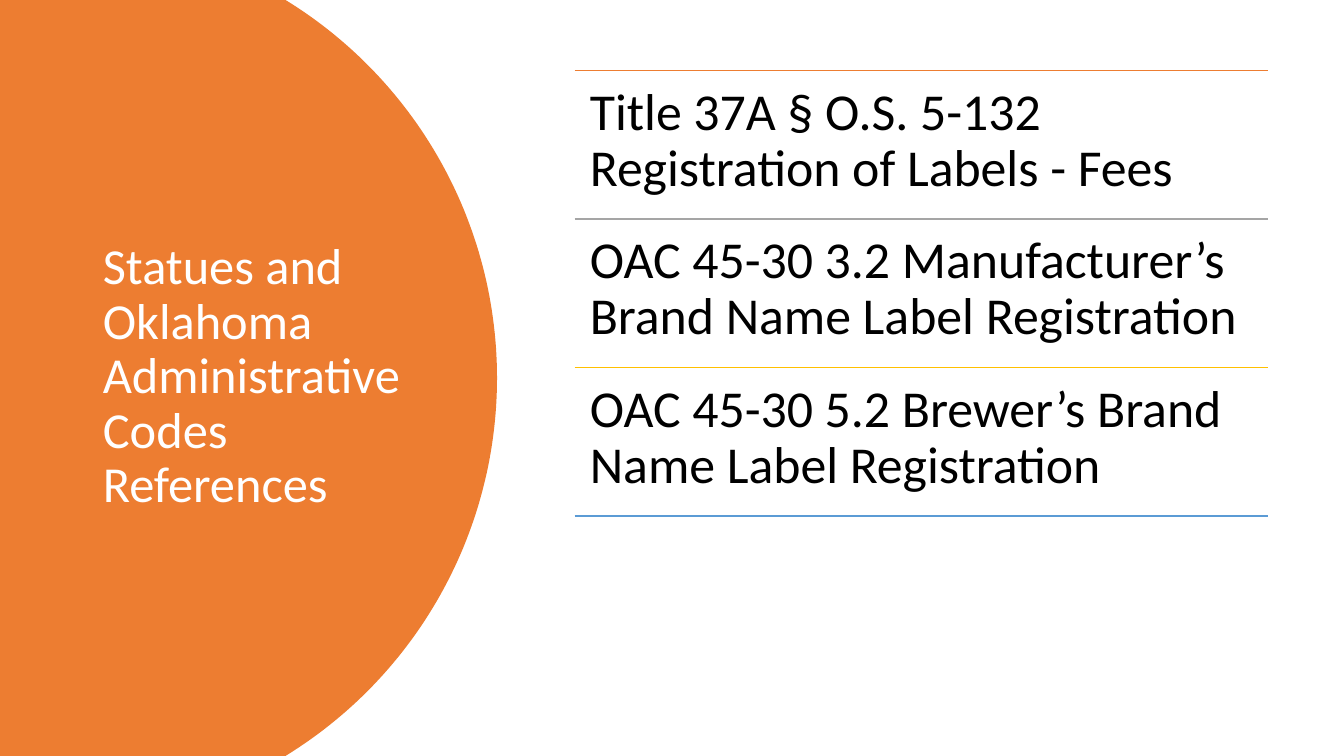
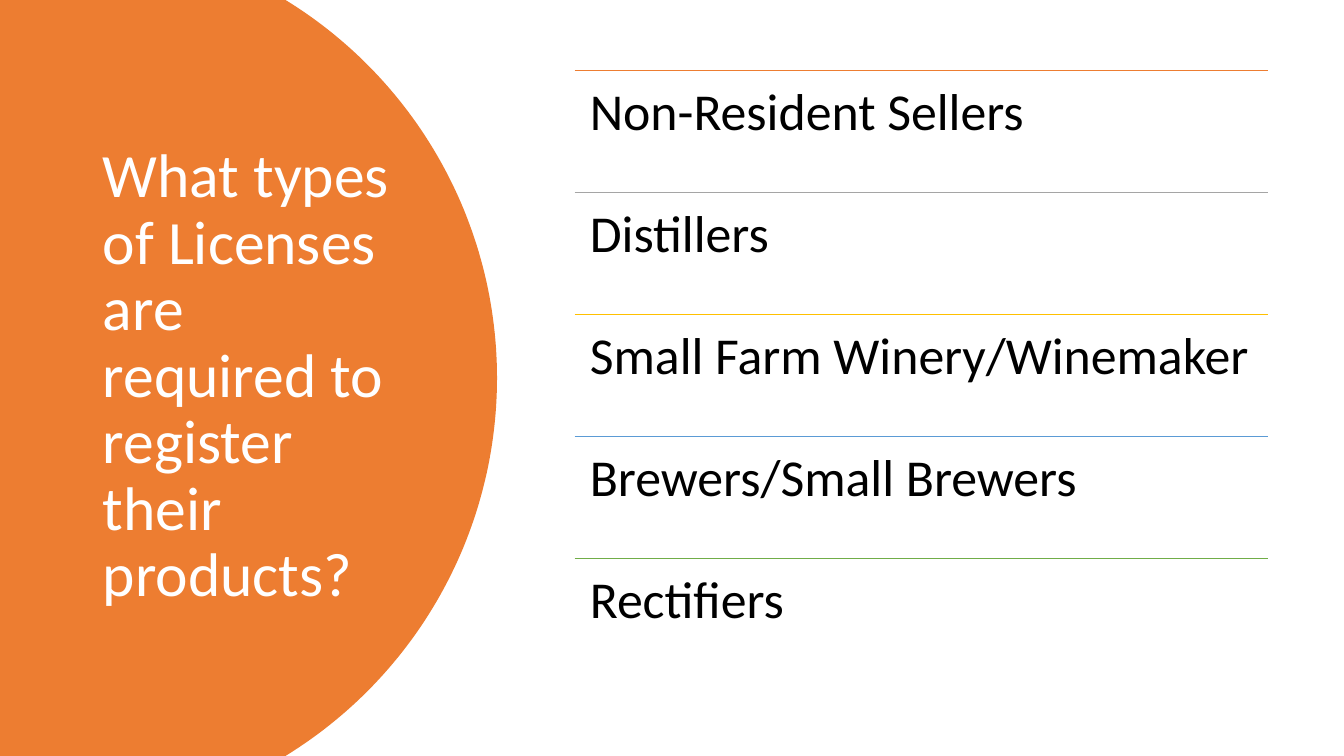
from dataclasses import dataclass
from math import asin, cos, sin

from lxml.etree import SubElement
from pptx import Presentation
from pptx.dml.color import RGBColor
from pptx.enum.shapes import MSO_CONNECTOR
from pptx.enum.text import MSO_ANCHOR, MSO_AUTO_SIZE, PP_ALIGN
from pptx.oxml.ns import qn
from pptx.presentation import Presentation as Deck
from pptx.slide import Slide
from pptx.text.text import TextFrame
from pptx.util import Inches, Pt


@dataclass(frozen=True)
class Theme:
    font: str = "Calibri"
    panel: str = "ED7D31"
    title: str = "FFFFFF"
    text: str = "000000"
    rules: tuple[str, ...] = ("ED7D31", "A5A5A5", "FFC000", "5B9BD5", "70AD47")
    item_size: int = 37
    rule_width: int = 1


@dataclass(frozen=True)
class Box:
    left: float
    top: float
    width: float
    height: float

    def emu(self) -> tuple[int, int, int, int]:
        return (Inches(self.left), Inches(self.top),
                Inches(self.width), Inches(self.height))


@dataclass(frozen=True)
class Topic:
    title: str
    title_size: int
    items: tuple[str, ...]
    list_height: float
    closing_rule: bool = False


THEME = Theme()
SLIDE_W, SLIDE_H = 13.33, 7.5
TITLE_BOX = Box(0.92, 0.7, 3.23, 6.09)
LIST_LEFT, LIST_TOP, LIST_WIDTH = 5.7, 0.7, 6.88
ITEM_INSET = 0.15
PANEL_RIGHT, PANEL_RADIUS = 4.93, 4.4
ARC_STEPS = 120

TOPICS = (
    Topic(
        "Statues and Oklahoma Administrative Codes References", 36,
        ("Title 37A § O.S. 5-132 Registration of Labels - Fees",
         "OAC 45-30 3.2 Manufacturer’s Brand Name Label Registration",
         "OAC 45-30 5.2 Brewer’s Brand Name Label Registration"),
        list_height=4.42, closing_rule=True,
    ),
    Topic(
        "What types of Licenses are required to register their products?", 44,
        ("Non-Resident Sellers", "Distillers", "Small Farm Winery/Winemaker",
         "Brewers/Small Brewers", "Rectifiers"),
        list_height=6.05,
    ),
)


def write(tf: TextFrame, text: str, size: int, color: str) -> None:
    tf.word_wrap = True
    tf.auto_size = MSO_AUTO_SIZE.NONE
    p = tf.paragraphs[0]
    p.alignment = PP_ALIGN.LEFT
    p.line_spacing = 0.9
    r = p.add_run()
    r.text = text
    r.font.name = THEME.font
    r.font.size = Pt(size)
    r.font.color.rgb = RGBColor.from_string(color)


def add_panel(slide: Slide) -> None:
    """Fill the left side up to a circular arc, behind the title."""
    center_x, center_y = PANEL_RIGHT - PANEL_RADIUS, SLIDE_H / 2
    reach = asin(center_y / PANEL_RADIUS)
    angles = [reach * (2 * i / ARC_STEPS - 1) for i in range(ARC_STEPS + 1)]
    arc = [(Inches(center_x + PANEL_RADIUS * cos(a)),
            Inches(center_y + PANEL_RADIUS * sin(a))) for a in angles]
    outline = slide.shapes.build_freeform(0, 0)
    outline.add_line_segments([*arc, (0, Inches(SLIDE_H))], close=True)
    sp = outline.convert_to_shape()
    sp.shadow.inherit = False
    sp.fill.solid()
    sp.fill.fore_color.rgb = RGBColor.from_string(THEME.panel)
    sp.line.fill.background()
    slide.shapes.title._element.addprevious(sp._element)


def add_title(slide: Slide, topic: Topic) -> None:
    title = slide.shapes.title
    title.left, title.top, title.width, title.height = TITLE_BOX.emu()
    tf = title.text_frame
    tf.vertical_anchor = MSO_ANCHOR.MIDDLE
    write(tf, topic.title, topic.title_size, THEME.title)


def add_rule(slide: Slide, top: float, color: str) -> None:
    y = Inches(top)
    line = slide.shapes.add_connector(
        MSO_CONNECTOR.STRAIGHT, Inches(LIST_LEFT), y,
        Inches(LIST_LEFT + LIST_WIDTH), y)
    line.line.color.rgb = RGBColor.from_string(color)
    line.line.width = Pt(THEME.rule_width)
    SubElement(line._element.spPr, qn("a:effectLst"))


def add_item(slide: Slide, box: Box, text: str) -> None:
    tf = slide.shapes.add_textbox(*box.emu()).text_frame
    tf.margin_left = tf.margin_right = Inches(ITEM_INSET)
    tf.margin_top = tf.margin_bottom = Inches(ITEM_INSET)
    tf.vertical_anchor = MSO_ANCHOR.TOP
    write(tf, text, THEME.item_size, THEME.text)


def add_ruled_list(slide: Slide, topic: Topic) -> None:
    count = len(topic.items)
    row = topic.list_height / count
    for i, text in enumerate(topic.items):
        top = LIST_TOP + i * row
        add_rule(slide, top, THEME.rules[i])
        add_item(slide, Box(LIST_LEFT, top, LIST_WIDTH, row), text)
    if topic.closing_rule:
        add_rule(slide, LIST_TOP + topic.list_height, THEME.rules[count])


def add_topic(prs: Deck, topic: Topic) -> None:
    slide = prs.slides.add_slide(prs.slide_layouts.get_by_name("Title Only"))
    add_panel(slide)
    add_title(slide, topic)
    add_ruled_list(slide, topic)


def main() -> None:
    prs = Presentation()
    prs.slide_width, prs.slide_height = Inches(SLIDE_W), Inches(SLIDE_H)
    for topic in TOPICS:
        add_topic(prs, topic)
    prs.save("out.pptx")


if __name__ == "__main__":
    main()
